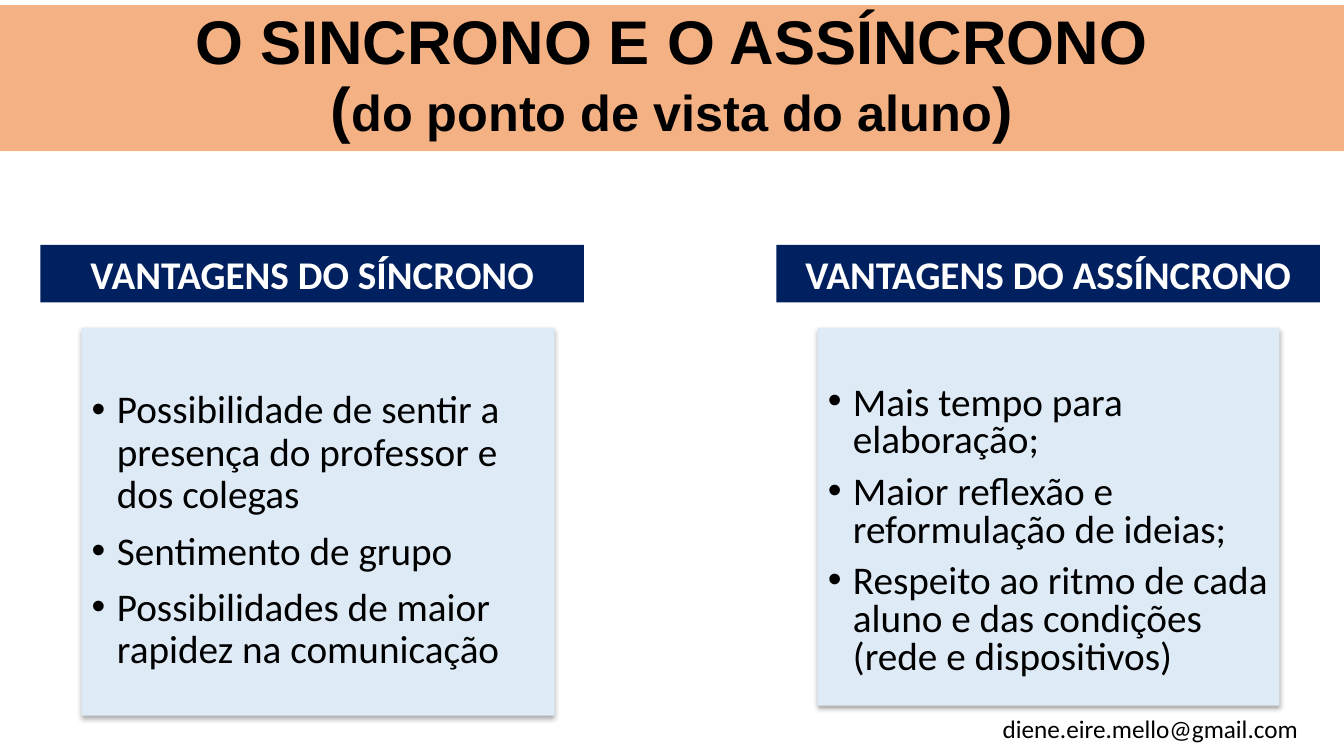
from lxml import etree
from pptx import Presentation
from pptx.dml.color import RGBColor
from pptx.enum.shapes import MSO_SHAPE
from pptx.enum.text import MSO_ANCHOR, MSO_AUTO_SIZE as AutoSize, PP_ALIGN as Align
from pptx.oxml import parse_xml
from pptx.oxml.ns import nsdecls, qn
from pptx.util import Inches, Pt

BLACK = RGBColor(0x00, 0x00, 0x00)
WHITE = RGBColor(0xFF, 0xFF, 0xFF)
ORANGE = RGBColor(0xF4, 0xB1, 0x83)
NAVY = RGBColor(0x00, 0x20, 0x60)
PALE_BLUE = RGBColor(0xDE, 0xEB, 0xF7)

SHADOW = (
    f'<a:effectLst {nsdecls("a")}>'
    '<a:outerShdw blurRad="44450" dist="27940" dir="5400000" algn="ctr">'
    '<a:srgbClr val="000000"><a:alpha val="32000"/></a:srgbClr>'
    '</a:outerShdw></a:effectLst>'
)


class SlideBuilder:
    title_font = "Arial"
    body_font = "Calibri"
    body_size = 28

    def __init__(self, slide):
        self.slide = slide

    def place(self, shape, left, top, width, height, color):
        shape.left, shape.top = Inches(left), Inches(top)
        shape.width, shape.height = Inches(width), Inches(height)
        shape.fill.solid()
        shape.fill.fore_color.rgb = color
        shape.line.fill.background()

    def add_run(self, paragraph, text, size, color=BLACK, bold=False, name=body_font):
        run = paragraph.add_run()
        run.text = text
        font = run.font
        font.name, font.size, font.bold = name, Pt(size), bold
        font.color.rgb = color

    def title(self, first_line, second_line, box):
        shape = self.slide.shapes.title
        self.place(shape, *box, ORANGE)
        frame = shape.text_frame
        frame.auto_size = AutoSize.NONE
        frame.vertical_anchor = MSO_ANCHOR.MIDDLE
        paragraph = frame.paragraphs[0]
        paragraph.alignment = Align.CENTER
        paragraph.line_spacing = 0.9
        paragraph.space_before = Pt(0)
        self.add_run(paragraph, first_line, 44, bold=True, name=self.title_font)
        paragraph.add_line_break()
        for text, size in second_line:
            self.add_run(paragraph, text, size, bold=True, name=self.title_font)

    def heading(self, text, box):
        shape = self.slide.shapes.add_shape(MSO_SHAPE.RECTANGLE, *map(Inches, box))
        self.place(shape, *box, NAVY)
        shape.shadow.inherit = False
        paragraph = shape.text_frame.paragraphs[0]
        paragraph.alignment = Align.CENTER
        self.add_run(paragraph, text, self.body_size, WHITE, bold=True)

    def bullet_list(self, index, items, box, spacing, top_inset):
        shape = self.slide.placeholders[index]
        self.place(shape, *box, PALE_BLUE)
        shape._element.spPr.append(parse_xml(SHADOW))
        frame = shape.text_frame
        frame.auto_size = AutoSize.NONE
        frame.vertical_anchor = MSO_ANCHOR.TOP
        frame.margin_top = Inches(top_inset)
        for number, item in enumerate(items):
            paragraph = frame.add_paragraph() if number else frame.paragraphs[0]
            properties = paragraph._p.get_or_add_pPr()
            properties.set("marL", str(Inches(0.25)))
            properties.set("indent", str(Inches(-0.25)))
            etree.SubElement(properties, qn("a:buFont"), typeface="Arial")
            etree.SubElement(properties, qn("a:buChar"), char="•")
            paragraph.line_spacing = spacing
            paragraph.space_before = Pt(10 if number else 0)
            self.add_run(paragraph, item, self.body_size)

    def label(self, text, box):
        frame = self.slide.shapes.add_textbox(*map(Inches, box)).text_frame
        frame.word_wrap = False
        paragraph = frame.paragraphs[0]
        paragraph.alignment = Align.CENTER
        self.add_run(paragraph, text, 18)


def main():
    presentation = Presentation()
    presentation.slide_width = Inches(13.33)
    presentation.slide_height = Inches(7.5)
    two_content = presentation.slide_layouts.get_by_name("Two Content")
    builder = SlideBuilder(presentation.slides.add_slide(two_content))

    # Title band
    builder.title(
        "O SINCRONO E O ASSÍNCRONO",
        [("(", 44), ("do ponto de vista do aluno", 36), (")", 44)],
        (0, 0.05, 13.33, 1.45),
    )

    # Two columns: heading and list of advantages
    columns = [
        (0.4, "VANTAGENS DO SÍNCRONO", 4.69, 3.85, 0.9, 0.62, [
            "Possibilidade de sentir a presença do professor e dos colegas",
            "Sentimento de grupo",
            "Possibilidades de maior rapidez na comunicação",
        ]),
        (7.7, "VANTAGENS DO ASSÍNCRONO", 4.58, 3.75, 0.8, 0.58, [
            "Mais tempo para elaboração;",
            "Maior reflexão e reformulação de ideias;",
            "Respeito ao ritmo de cada aluno e das condições (rede e dispositivos)",
        ]),
    ]
    for index, (left, heading, width, height, spacing, inset, items) in enumerate(columns, 1):
        builder.heading(heading, (left, 2.43, 5.39, 0.57))
        builder.bullet_list(index, items, (left + 0.41, 3.25, width, height), spacing, inset)

    # Contact
    builder.label("diene.eire.mello@gmail.com", (9.83, 7.03, 3.16, 0.4))

    presentation.save("out.pptx")


if __name__ == "__main__":
    main()
